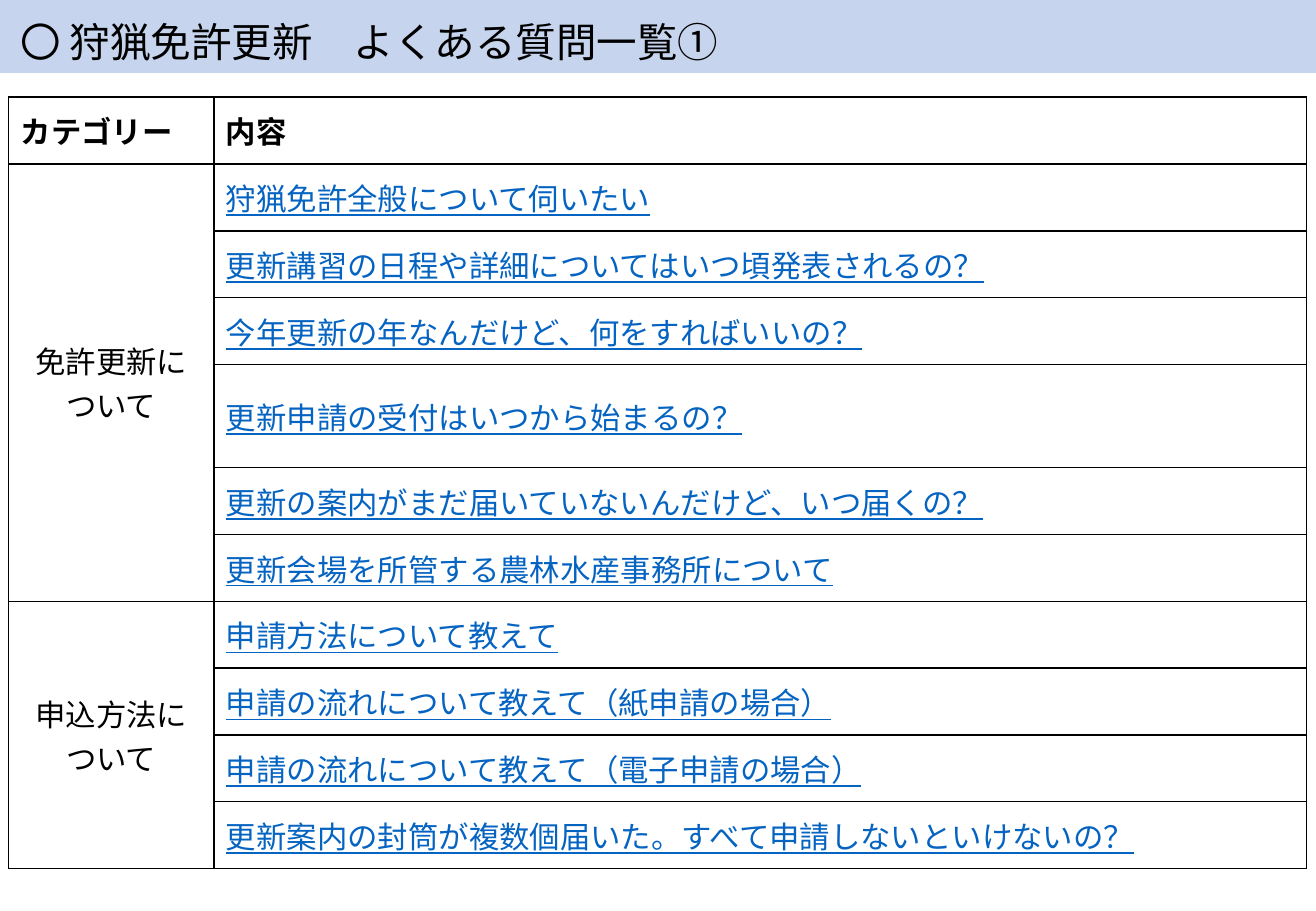
"""Build the index slide of frequent questions on hunting licence renewal."""
from dataclasses import dataclass
from typing import Optional

from lxml.etree import SubElement
from pptx import Presentation
from pptx.dml.color import RGBColor as RGB
from pptx.enum.shapes import MSO_SHAPE as SHAPE
from pptx.enum.text import MSO_ANCHOR as ANCHOR, MSO_AUTO_SIZE as AUTO, PP_ALIGN as ALIGN
from pptx.oxml.ns import qn
from pptx.slide import Slide
from pptx.table import _Cell as Cell
from pptx.text.text import _Paragraph as Paragraph
from pptx.util import Inches, Pt


@dataclass(frozen=True)
class Theme:
    font: str = "Noto Sans CJK JP"
    text: str = "000000"
    link: str = "0563C1"
    band: str = "8FAADC"
    band_alpha: int = 50
    border: str = "000000"
    border_width: float = 1
    title_size: float = 24
    body_size: float = 18


@dataclass(frozen=True)
class Question:
    text: str
    rows: int = 11


@dataclass(frozen=True)
class Category:
    lines: tuple[str, ...]
    questions: tuple[Question, ...]


THEME = Theme()
COLUMNS, ROWS = 1083, 150
WIDTH, HEIGHT = Inches(10.83), Inches(7.5)
HEADER_ROWS = 11
TABLE_COLUMNS = (169, 899)
HEADERS = ("カテゴリー", "内容")
CATEGORIES = (
    Category(("免許更新に", "ついて"), (
        Question("狩猟免許全般について伺いたい"),
        Question("更新講習の日程や詳細についてはいつ頃発表されるの？"),
        Question("今年更新の年なんだけど、何をすればいいの？"),
        Question("更新申請の受付はいつから始まるの？", rows=17),
        Question("更新の案内がまだ届いていないんだけど、いつ届くの？"),
        Question("更新会場を所管する農林水産事務所について"),
    )),
    Category(("申込方法に", "ついて"), (
        Question("申請方法について教えて"),
        Question("申請の流れについて教えて（紙申請の場合）"),
        Question("申請の流れについて教えて（電子申請の場合）"),
        Question("更新案内の封筒が複数個届いた。すべて申請しないといけないの？"),
    )),
)


def col(n: float) -> int:
    return round(WIDTH * n / COLUMNS)


def row(n: float) -> int:
    return round(HEIGHT * n / ROWS)


def add_run(p: Paragraph, text: str, size: float, color: str = THEME.text,
            bold: bool = False, underline: bool = False) -> None:
    r = p.add_run()
    r.text = text
    font = r.font
    font.size, font.bold, font.underline = Pt(size), bold, underline
    font.color.rgb = RGB.from_string(color)
    font.name = THEME.font
    SubElement(r._r.get_or_add_rPr(), qn("a:ea"), typeface=THEME.font)


def style_cell(cell: Cell) -> None:
    tc_pr = cell._tc.get_or_add_tcPr()
    for side in ("a:lnL", "a:lnR", "a:lnT", "a:lnB"):
        ln = SubElement(tc_pr, qn(side), w=str(Pt(THEME.border_width)))
        SubElement(SubElement(ln, qn("a:solidFill")), qn("a:srgbClr"), val=THEME.border)
    cell.fill.background()
    cell.vertical_anchor = ANCHOR.MIDDLE


def fill_cell(cell: Cell, lines: tuple[str, ...], align: Optional[ALIGN] = None,
              color: str = THEME.text, bold: bool = False, underline: bool = False) -> None:
    tf = cell.text_frame
    for i, line in enumerate(lines):
        p = tf.add_paragraph() if i else tf.paragraphs[0]
        p.alignment = align
        add_run(p, line, THEME.body_size, color, bold, underline)


def add_band(s: Slide) -> None:
    sp = s.shapes.add_shape(SHAPE.RECTANGLE, 0, 0, WIDTH, row(12))
    sp.shadow.inherit = False
    sp.line.fill.background()
    sp.fill.solid()
    sp.fill.fore_color.rgb = RGB.from_string(THEME.band)
    color = sp._element.spPr.find(qn("a:solidFill")).find(qn("a:srgbClr"))
    SubElement(color, qn("a:alpha"), val=str(THEME.band_alpha * 1000))


def add_question_table(s: Slide) -> None:
    heights = [HEADER_ROWS] + [q.rows for c in CATEGORIES for q in c.questions]
    frame = s.shapes.add_table(len(heights), len(TABLE_COLUMNS), col(7), row(16),
                               col(sum(TABLE_COLUMNS)), row(sum(heights)))
    table = frame.table
    table.first_row = table.horz_banding = False
    for column, n in zip(table.columns, TABLE_COLUMNS):
        column.width = col(n)
    for table_row, n in zip(table.rows, heights):
        table_row.height = row(n)
    for cell in table.iter_cells():
        style_cell(cell)

    for i, header in enumerate(HEADERS):
        fill_cell(table.cell(0, i), (header,), bold=True)
    top = 1
    for category in CATEGORIES:
        bottom = top + len(category.questions) - 1
        table.cell(top, 0).merge(table.cell(bottom, 0))
        fill_cell(table.cell(top, 0), category.lines, ALIGN.CENTER)
        for i, question in enumerate(category.questions, top):
            fill_cell(table.cell(i, 1), (question.text,), color=THEME.link, underline=True)
        top = bottom + 1


def add_title(s: Slide) -> None:
    tf = s.shapes.add_textbox(col(7), row(1.8), col(604), row(10)).text_frame
    tf.word_wrap = False
    tf.auto_size = AUTO.SHAPE_TO_FIT_TEXT
    add_run(tf.paragraphs[0], "〇 狩猟免許更新　よくある質問一覧①", THEME.title_size)


def main() -> None:
    prs = Presentation()
    prs.slide_width, prs.slide_height = WIDTH, HEIGHT
    s = prs.slides.add_slide(prs.slide_layouts[6])
    add_band(s)
    add_question_table(s)
    add_title(s)
    prs.save("out.pptx")


if __name__ == "__main__":
    main()
